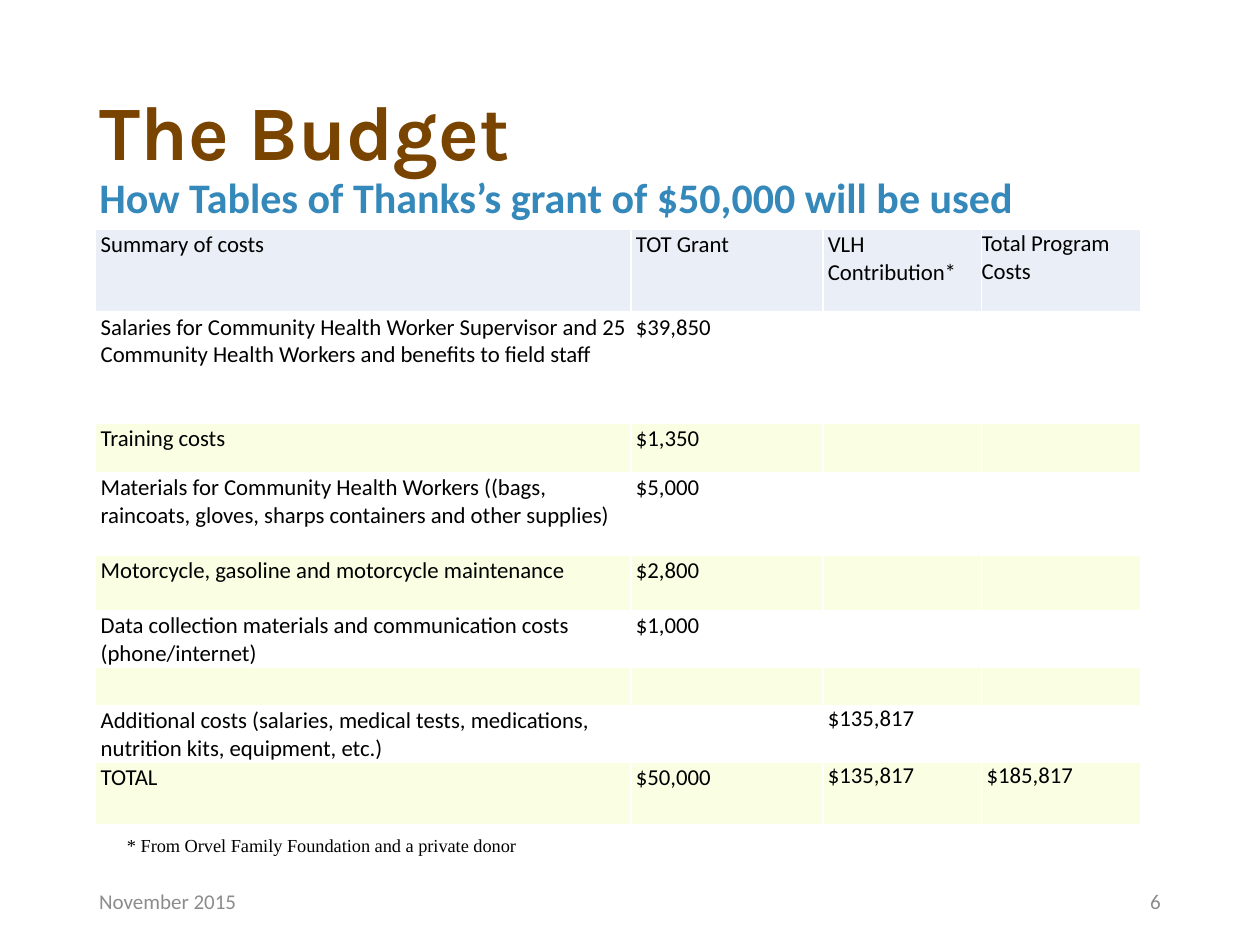
from lxml.etree import SubElement
from pptx import Presentation
from pptx.dml.color import RGBColor
from pptx.enum.text import MSO_ANCHOR, PP_ALIGN
from pptx.oxml.ns import qn
from pptx.util import Cm, Pt

COLORS = {"title": "794400", "subtitle": "3588BA", "text": "000000", "muted": "8C8C8C",
          "header": "EAEFF7", "band": "FAFFE3", "plain": "FFFFFF", "border": "FFFFFF"}

TITLE = "The Budget"
SUBTITLE = "How Tables of Thanks’s grant of $50,000 will be used"
# Row height in cm, then the four cells
ROWS = [
    (1.66, "Summary of costs", "TOT Grant", "VLH Contribution*", "Total Program Costs"),
    (2.24, "Salaries for Community Health Worker Supervisor and 25 Community Health Workers "
           "and benefits to field staff", "$39,850", "", ""),
    (0.99, "Training costs", "$1,350", "", ""),
    (1.68, "Materials for Community Health Workers ((bags, raincoats, gloves, sharps "
           "containers and other supplies)", "$5,000", "", ""),
    (1.11, "Motorcycle, gasoline and motorcycle maintenance", "$2,800", "", ""),
    (1.13, "Data collection materials and communication costs (phone/internet)",
     "$1,000", "", ""),
    (0.76, "", "", "", ""),
    (1.13, "Additional costs (salaries, medical tests, medications, nutrition kits, "
           "equipment, etc.)", "", "$135,817", ""),
    (1.26, "TOTAL", "$50,000", "$135,817", "$185,817"),
]
COL_WIDTHS = [10.79, 3.87, 3.2, 3.2]
FLUSH_CELLS = {(0, 3)}  # text starts right at the cell edge
# Text, box in cm, size, font, colour, alignment, anchor
NOTES = [
    ("November 2015", (1.75, 17.65, 5.72, 1.02), 12, "Calibri", "muted",
     PP_ALIGN.LEFT, MSO_ANCHOR.MIDDLE),
    ("6", (17.93, 17.65, 5.72, 1.02), 12, "Calibri", "muted",
     PP_ALIGN.RIGHT, MSO_ANCHOR.MIDDLE),
    ("* From Orvel Family Foundation and a private donor", (2.31, 16.69, 12.62, 1.47),
     10.5, "Times New Roman", "text", PP_ALIGN.LEFT, MSO_ANCHOR.TOP),
]


def add_run(p, text, size, font, color, bold=False):
    r = p.add_run()
    r.text = text
    r.font.size, r.font.name, r.font.bold = Pt(size), font, bold
    r.font.color.rgb = RGBColor.from_string(COLORS[color])


def add_borders(cell):
    tc_pr = cell._tc.get_or_add_tcPr()
    for side in ("a:lnL", "a:lnR", "a:lnT", "a:lnB"):
        ln = SubElement(tc_pr, qn(side), w=str(Pt(1)))
        fill = SubElement(ln, qn("a:solidFill"))
        SubElement(fill, qn("a:srgbClr"), val=COLORS["border"])


def fill_cell(cell, text, fill, flush, top):
    add_borders(cell)
    cell.fill.solid()
    cell.fill.fore_color.rgb = RGBColor.from_string(COLORS[fill])
    cell.margin_left = cell.margin_right = Cm(0 if flush else 0.1)
    cell.margin_top, cell.margin_bottom = Cm(top), Cm(0)
    p = cell.text_frame.paragraphs[0]
    if text:
        add_run(p, text, 13, "Calibri", "text")
    else:  # keep empty cells from stretching their row
        SubElement(p._p, qn("a:endParaRPr"), sz="1300")


prs = Presentation()
prs.slide_width, prs.slide_height = Cm(25.4), Cm(19.05)
s = prs.slides.add_slide(prs.slide_layouts[5])

# Title and subtitle
title = s.shapes.title
title.left, title.top, title.width, title.height = Cm(1.75), Cm(1.02), Cm(20.9), Cm(4.34)
tf = title.text_frame
tf.word_wrap = True
tf.vertical_anchor = MSO_ANCHOR.MIDDLE
p = tf.paragraphs[0]
p.alignment, p.line_spacing = PP_ALIGN.LEFT, 0.9
add_run(p, TITLE, 44, "Karla", "title", True)
p.add_line_break()
add_run(p, SUBTITLE, 24, "Calibri", "subtitle", True)

# Budget table
heights = [row[0] for row in ROWS]
table = s.shapes.add_table(len(ROWS), len(COL_WIDTHS), Cm(1.93), Cm(4.63),
                           Cm(sum(COL_WIDTHS)), Cm(sum(heights))).table
for col, width in zip(table.columns, COL_WIDTHS):
    col.width = Cm(width)
for i, (height, *texts) in enumerate(ROWS):
    table.rows[i].height = Cm(height)
    fill = "header" if i == 0 else "plain" if i % 2 else "band"
    for j, text in enumerate(texts):
        top = 0.03 if j < 2 or (i, j) == (0, 2) else 0
        fill_cell(table.cell(i, j), text, fill, (i, j) in FLUSH_CELLS, top)

# Footer and footnote
for text, box, size, font, color, align, anchor in NOTES:
    tf = s.shapes.add_textbox(*map(Cm, box)).text_frame
    tf.word_wrap = True
    tf.vertical_anchor = anchor
    p = tf.paragraphs[0]
    p.alignment = align
    add_run(p, text, size, font, color)

prs.save("out.pptx")
